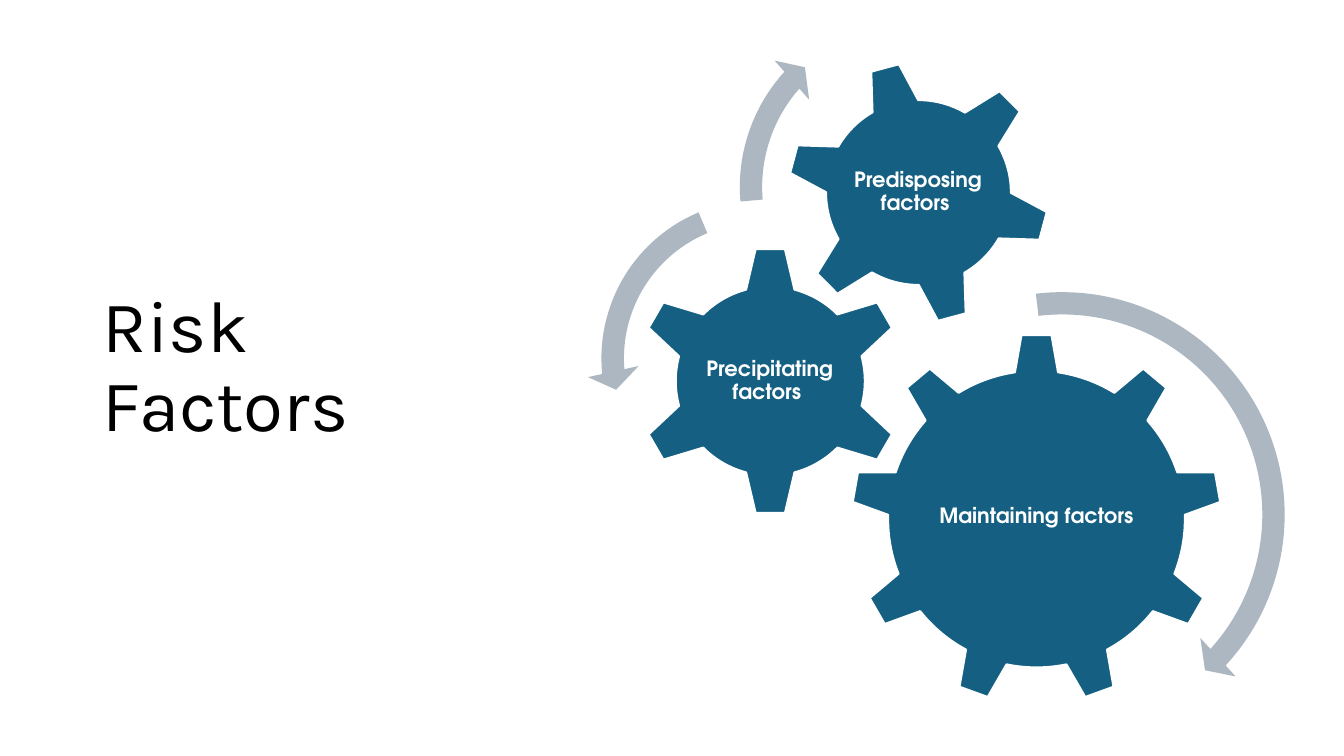
"""Build the Risk Factors slide: three labelled gears with turning arrows."""
from pptx import Presentation
from pptx.dml.color import RGBColor
from pptx.enum.shapes import MSO_SHAPE
from pptx.enum.text import MSO_ANCHOR, PP_ALIGN
from pptx.util import Inches, Pt

BLACK = RGBColor(0x00, 0x00, 0x00)
WHITE = RGBColor(0xFF, 0xFF, 0xFF)
GEAR_BLUE = RGBColor(0x15, 0x60, 0x82)
ARROW_GREY = RGBColor(0xAC, 0xB7, 0xC1)

HEADING = ("Risk Factors", (0.92, 0.61, 3.69, 6.09))

# label, preset, left, top, size, rotation, label box
GEARS = [
    ("Maintaining factors", MSO_SHAPE.GEAR_9, 8.44, 3.31, 3.68, 0, (9.18, 4.18, 2.2, 1.89)),
    ("Precipitating factors ", MSO_SHAPE.GEAR_6, 6.3, 2.44, 2.68, 0, (6.97, 3.12, 1.33, 1.32)),
    ("Predisposing factors ", MSO_SHAPE.GEAR_6, 7.8, 0.6, 2.62, 345, (8.37, 1.17, 1.47, 1.47)),
]

# preset, left, top, size, adjustments
ARROWS = [
    (MSO_SHAPE.CIRCULAR_ARROW, 8.18, 2.75, 4.71, (0.047, 2.99, 25.488, 157.928, 0.055)),
    (MSO_SHAPE.LEFT_CIRCULAR_ARROW, 5.82, 1.84, 3.43, (0.065, 4.3, 104.891, 148.378, 0.075)),
    (MSO_SHAPE.CIRCULAR_ARROW, 7.19, 0.01, 3.69, (0.06, 3.941, 133.138, 105.082, 0.07)),
]


def add_label(slide, text, box, font_name, size, color, bold=False, align=PP_ALIGN.LEFT, inset=None):
    frame = slide.shapes.add_textbox(*map(Inches, box)).text_frame
    frame.word_wrap = True
    frame.vertical_anchor = MSO_ANCHOR.MIDDLE
    if inset is not None:
        frame.margin_left = frame.margin_right = Inches(inset)
        frame.margin_top = frame.margin_bottom = Inches(inset)
    paragraph = frame.paragraphs[0]
    paragraph.text = text
    paragraph.alignment = align
    paragraph.line_spacing = 0.9
    paragraph.font.name = font_name
    paragraph.font.size = Pt(size)
    paragraph.font.bold = bold
    paragraph.font.color.rgb = color


def add_square_shape(slide, preset, left, top, size, fill):
    shape = slide.shapes.add_shape(preset, *map(Inches, (left, top, size, size)))
    shape.shadow.inherit = False
    shape.fill.solid()
    shape.fill.fore_color.rgb = fill
    return shape


def main():
    prs = Presentation()
    prs.slide_width, prs.slide_height = Inches(13.33), Inches(7.5)
    slide = prs.slides.add_slide(prs.slide_layouts[6])

    heading, heading_box = HEADING
    add_label(slide, heading, heading_box, "Karla", 52, BLACK)

    for label, preset, left, top, size, rotation, label_box in GEARS:
        gear = add_square_shape(slide, preset, left, top, size, GEAR_BLUE)
        gear.rotation = rotation
        gear.line.color.rgb = WHITE
        gear.line.width = Pt(1.5)
        add_label(slide, label, label_box, "TeX Gyre Adventor", 15, WHITE, True, PP_ALIGN.CENTER, 0.02)

    for preset, left, top, size, adjustments in ARROWS:
        arrow = add_square_shape(slide, preset, left, top, size, ARROW_GREY)
        arrow.line.fill.background()
        for index, value in enumerate(adjustments):
            arrow.adjustments[index] = value

    prs.save("out.pptx")


if __name__ == "__main__":
    main()
